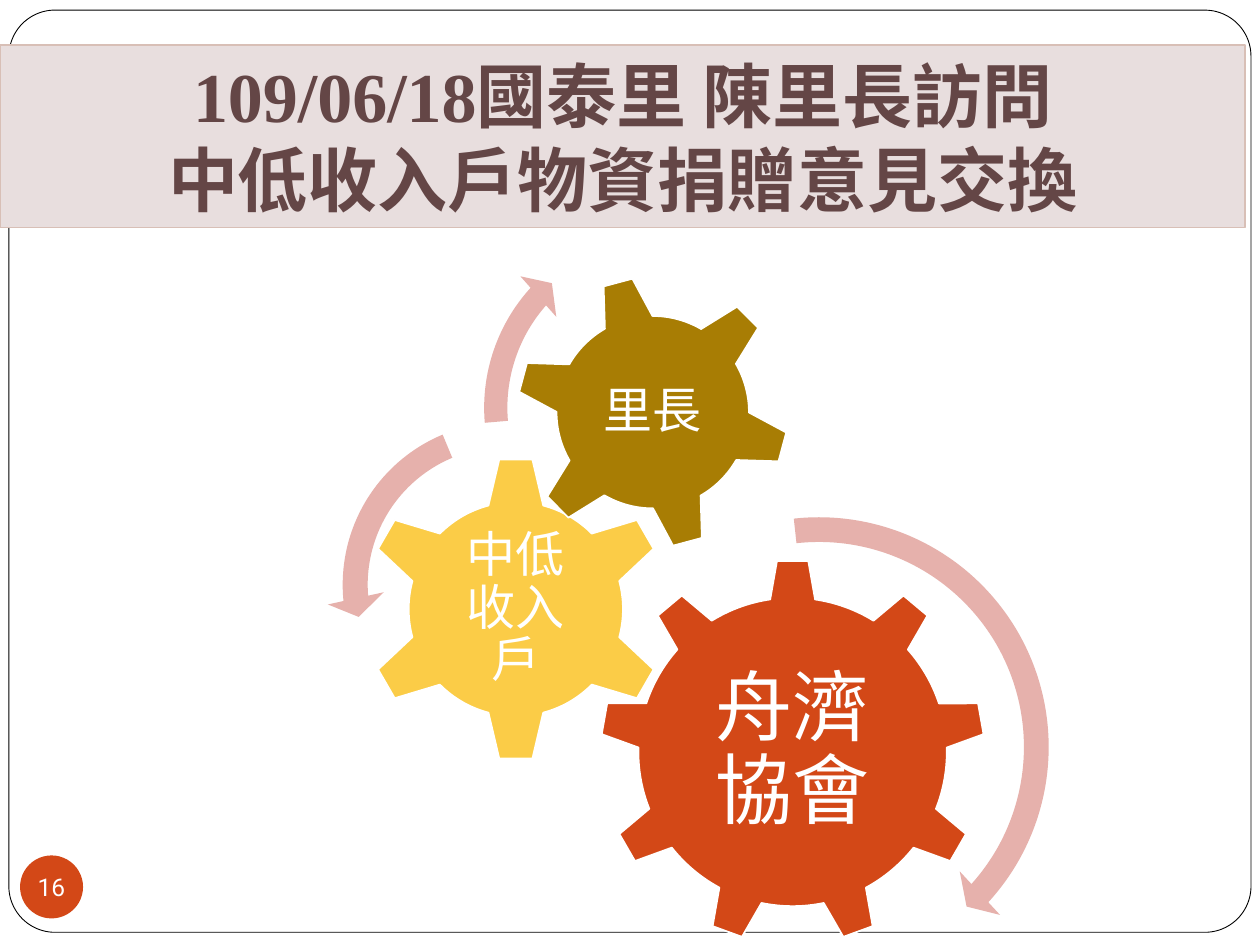
from lxml.etree import SubElement
from pptx import Presentation
from pptx.dml.color import RGBColor
from pptx.enum.shapes import MSO_SHAPE
from pptx.enum.text import MSO_ANCHOR, MSO_AUTO_SIZE, PP_ALIGN
from pptx.oxml.ns import qn
from pptx.util import Cm, Pt

WHITE = RGBColor(0xFF, 0xFF, 0xFF)
BLACK = RGBColor(0x00, 0x00, 0x00)
ORANGE = RGBColor(0xD3, 0x48, 0x17)
YELLOW = RGBColor(0xFB, 0xCC, 0x47)
OLIVE = RGBColor(0xA8, 0x7D, 0x04)
PINK = RGBColor(0xE6, 0xB1, 0xAC)
BAND_FILL = RGBColor(0xE8, 0xDE, 0xDE)
BAND_LINE = RGBColor(0xD8, 0xBF, 0xB6)
TITLE_COLOR = RGBColor(0x64, 0x46, 0x46)
SERIF = "Times New Roman"

# Content: lengths in cm, every shape placed by its centre
TITLE = "109/06/18國泰里 陳里長訪問\v中低收入戶物資捐贈意見交換"
PAGE_NUMBER = "16"
GEARS = [  # text, preset, centre, diameter, rotation, fill, label size, font size
    ("舟濟協會", MSO_SHAPE.GEAR_9, (15.98, 15.16), 7.77, 0, ORANGE, (4.65, 3.99), 44),
    ("中低收入戶", MSO_SHAPE.GEAR_6, (10.4, 12.28), 6.17, 0, YELLOW, (3.07, 3.05), 28),
    ("里長", MSO_SHAPE.GEAR_6, (13.16, 8.31), 5.54, 345, OLIVE, (3.1, 3.1), 28),
]
ARROWS = [  # preset, centre, diameter, adjustments
    (MSO_SHAPE.CIRCULAR_ARROW, (16.51, 15.06), 9.96, (0.05, 2.99, 25.34, 158.23, 0.06)),
    (MSO_SHAPE.LEFT_CIRCULAR_ARROW, (10.19, 11.79), 7.21, (0.07, 4.3, 104.89, 148.38, 0.08)),
    (MSO_SHAPE.CIRCULAR_ARROW, (13.35, 8.22), 7.8, (0.06, 3.94, 133.14, 105.08, 0.07)),
]


def box(centre, width, height):
    return (Cm(centre[0] - width / 2), Cm(centre[1] - height / 2),
            Cm(width), Cm(height))


def add_filled(slide, preset, centre, width, height, fill, line=None, line_width=1):
    shape = slide.shapes.add_shape(preset, *box(centre, width, height))
    shape.shadow.inherit = False
    paint(shape, fill, line, line_width)
    return shape


def paint(shape, fill, line, line_width):
    shape.fill.solid()
    shape.fill.fore_color.rgb = fill
    if line is None:
        shape.line.fill.background()
    else:
        shape.line.color.rgb = line
        shape.line.width = Pt(line_width)


def write(shape, text, size, color, font=SERIF, bold=False, margin=0.0, wrap=True):
    frame = shape.text_frame
    frame.text = text
    frame.word_wrap = wrap
    frame.vertical_anchor = MSO_ANCHOR.MIDDLE
    frame.margin_left = frame.margin_right = Cm(margin)
    frame.margin_top = frame.margin_bottom = Cm(margin)
    paragraph = frame.paragraphs[0]
    paragraph.alignment = PP_ALIGN.CENTER
    for run in paragraph.runs:
        run.font.size = Pt(size)
        run.font.name = font
        run.font.bold = bold
        run.font.color.rgb = color
    return paragraph


presentation = Presentation()
presentation.slide_width, presentation.slide_height = Cm(25.4), Cm(19.05)
slide = presentation.slides.add_slide(presentation.slide_layouts[5])

# Rounded page frame, behind the title
frame_shape = add_filled(slide, MSO_SHAPE.ROUNDED_RECTANGLE, (12.7, 9.5),
                         25.04, 18.59, WHITE, BLACK, 0.5)
frame_shape.adjustments[0] = 0.05
slide.shapes.title.element.addprevious(frame_shape.element)

# Title band
title = slide.shapes.title
title.left, title.top, title.width, title.height = Cm(0), Cm(0.91), Cm(25.1), Cm(3.68)
paint(title, BAND_FILL, BAND_LINE, 0.75)
write(title, TITLE, 40, TITLE_COLOR, bold=True, margin=0.13)
title.text_frame.auto_size = MSO_AUTO_SIZE.NONE

# Gears with upright labels
for text, preset, centre, diameter, rotation, fill, label_size, size in GEARS:
    gear = add_filled(slide, preset, centre, diameter, diameter, fill, WHITE)
    gear.rotation = rotation
    label = slide.shapes.add_textbox(*box(centre, *label_size))
    write(label, text, size, WHITE, margin=0.12).line_spacing = 0.9

# Turning arrows
for preset, centre, diameter, adjustments in ARROWS:
    arrow = add_filled(slide, preset, centre, diameter, diameter, PINK)
    for index, value in enumerate(adjustments):
        arrow.adjustments[index] = value

# Page number badge
badge = add_filled(slide, MSO_SHAPE.OVAL, (1.04, 17.88), 1.27, 1.27, ORANGE)
write(badge, PAGE_NUMBER, 14, WHITE, font="Roboto", wrap=False)

presentation.save("out.pptx")
